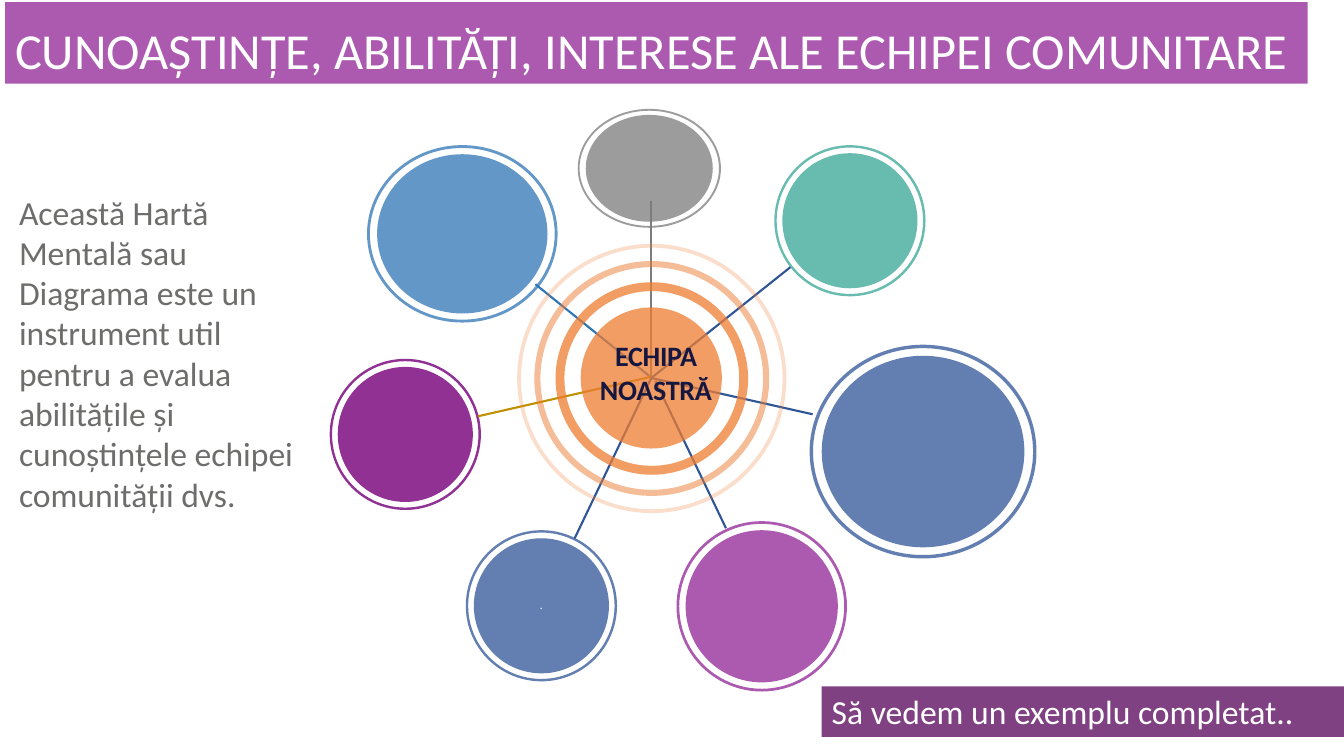
from dataclasses import dataclass

from lxml.etree import SubElement
from pptx import Presentation
from pptx.dml.color import RGBColor
from pptx.enum.shapes import MSO_CONNECTOR as Connector, MSO_SHAPE as Shape
from pptx.enum.text import MSO_ANCHOR as Anchor, MSO_AUTO_SIZE as AutoSize, PP_ALIGN as Align
from pptx.oxml.ns import qn
from pptx.util import Emu, Pt

PX = 9144  # 100 px to the inch

WHITE = RGBColor(0xFF, 0xFF, 0xFF)
GREY = RGBColor(0x7C, 0x7C, 0x7C)
TEAL = RGBColor(0x68, 0xBB, 0xAF)
NAVY = RGBColor(0x2F, 0x55, 0x97)
BLUE = RGBColor(0x2E, 0x75, 0xB6)
ORCHID = RGBColor(0xAB, 0x5A, 0xB0)
PURPLE = RGBColor(0x90, 0x31, 0x93)
PLUM = RGBColor(0x7F, 0x41, 0x82)
GOLD = RGBColor(0xBF, 0x90, 0x00)
ORANGE = RGBColor(0xED, 0x7D, 0x31)
INK = RGBColor(0x16, 0x17, 0x41)
TEXT_GREY = RGBColor(0x6D, 0x6E, 0x6C)

HUB_CENTRE = (646, 375)
HUB_DISC = 140
BUBBLE_RING = 0.016
BUBBLE_INSET = 0.053


@dataclass(frozen=True)
class Box:
    left: int
    top: int
    width: int
    height: int

    def emu(self) -> tuple:
        return tuple(Emu(n * PX) for n in (self.left, self.top, self.width, self.height))

    def inset(self, share: float) -> "Box":
        dx, dy = round(self.width * share), round(self.height * share)
        return Box(self.left + dx, self.top + dy, self.width - 2 * dx, self.height - 2 * dy)


@dataclass(frozen=True)
class Bubble:
    ring: Box
    color: RGBColor
    opacity: int = 100
    label: str = ""


@dataclass(frozen=True)
class Spoke:
    start: tuple[int, int]
    end: tuple[int, int]
    color: RGBColor


@dataclass(frozen=True)
class HubRing:
    size: int
    thickness: float
    opacity: int


BUBBLES = [
    Bubble(Box(573, 108, 142, 118), GREY, 75),
    Bubble(Box(768, 144, 150, 150), TEAL),
    Bubble(Box(803, 342, 225, 212), NAVY, 75),
    Bubble(Box(671, 517, 169, 169), ORCHID),
    Bubble(Box(462, 526, 150, 150), NAVY, 75, "."),
    Bubble(Box(327, 356, 150, 150), PURPLE),
    Bubble(Box(364, 144, 189, 176), BLUE, 75),
]
SPOKES = [
    Spoke((646, 199), (646, 377), GREY),
    Spoke((784, 265), (646, 375), NAVY),
    Spoke((531, 282), (644, 373), BLUE),
    Spoke((474, 413), (645, 374), GOLD),
    Spoke((806, 411), (646, 375), NAVY),
    Spoke((720, 524), (650, 378), NAVY),
    Spoke((570, 534), (646, 375), NAVY),
]
HUB_RINGS = [HubRing(191, 0.046, 75), HubRing(233, 0.026, 50), HubRing(267, 0.014, 25)]


def add_filled(page, kind: Shape, box: Box, color: RGBColor, opacity: int = 100):
    """Add a preset shape with a plain fill, no outline and no shadow."""
    shape = page.shapes.add_shape(kind, *box.emu())
    shape.shadow.inherit = False
    shape.line.fill.background()
    shape.fill.solid()
    shape.fill.fore_color.rgb = color
    if opacity < 100:
        tint = next(shape._element.spPr.iter(qn("a:srgbClr")))
        SubElement(tint, qn("a:alpha"), val=str(opacity * 1000))
    return shape


def add_donut(page, box: Box, thickness: float, color: RGBColor, opacity: int) -> None:
    donut = add_filled(page, Shape.DONUT, box, color, opacity)
    donut.adjustments[0] = thickness


def write(shape, text: str, size: int, color: RGBColor, *, bold: bool = False,
          align: Align = Align.LEFT, anchor: Anchor = Anchor.TOP,
          line_spacing: float = 1.0, tracking: int = 0, margin: int | None = None) -> None:
    """Set one paragraph; tracking is in hundredths of a point."""
    frame = shape.text_frame
    frame_format = {"word_wrap": True, "auto_size": AutoSize.NONE, "vertical_anchor": anchor}
    if margin is not None:
        for side in ("left", "top", "right", "bottom"):
            frame_format[f"margin_{side}"] = margin
    para = frame.paragraphs[0]
    span = para.add_run()
    span.text = text
    formats = [
        (frame, frame_format),
        (para, {"alignment": align, "line_spacing": line_spacing}),
        (span.font, {"name": "Calibri", "size": Pt(size), "bold": bold}),
    ]
    for target, values in formats:
        for name, value in values.items():
            setattr(target, name, value)
    span.font.color.rgb = color
    if tracking:
        span.font._element.set("spc", str(tracking))


def add_bubble(page, bubble: Bubble) -> None:
    disc = add_filled(page, Shape.OVAL, bubble.ring.inset(BUBBLE_INSET),
                      bubble.color, bubble.opacity)
    if bubble.label:
        write(disc, bubble.label, 8, WHITE, align=Align.CENTER, anchor=Anchor.MIDDLE,
              line_spacing=0.95, tracking=-20, margin=0)
    add_donut(page, bubble.ring, BUBBLE_RING, bubble.color, bubble.opacity)


def add_spoke(page, spoke: Spoke) -> None:
    ends = (Emu(n * PX) for n in spoke.start + spoke.end)
    line = page.shapes.add_connector(Connector.STRAIGHT, *ends)
    line.line.color.rgb = spoke.color
    line.line.width = Pt(1.5)
    SubElement(line._element.spPr, qn("a:effectLst"))


def hub_box(size: int) -> Box:
    x, y = HUB_CENTRE
    return Box(x - size // 2, y - size // 2, size, size)


def add_hub(page) -> None:
    add_filled(page, Shape.OVAL, hub_box(HUB_DISC), ORANGE, 75)
    for ring in HUB_RINGS:
        add_donut(page, hub_box(ring.size), ring.thickness, ORANGE, ring.opacity)
    label = page.shapes.add_textbox(*Box(571, 331, 159, 77).emu())
    write(label, "ECHIPA NOASTRĂ", 20, INK, bold=True, align=Align.CENTER,
          anchor=Anchor.MIDDLE, tracking=-20)


def add_title(page) -> None:
    title = page.shapes.title
    title.left, title.top, title.width, title.height = Box(5, 2, 1292, 81).emu()
    title.fill.solid()
    title.fill.fore_color.rgb = ORCHID
    write(title, "CUNOAȘTINȚE, ABILITĂȚI, INTERESE ALE ECHIPEI COMUNITARE", 36, WHITE,
          line_spacing=1.2)


def main() -> None:
    deck = Presentation()
    deck.slide_width, deck.slide_height = Emu(1333 * PX), Emu(750 * PX)
    page = deck.slides.add_slide(deck.slide_layouts.get_by_name("Title Only"))
    add_title(page)
    for bubble in BUBBLES:
        add_bubble(page, bubble)
    for spoke in SPOKES:
        add_spoke(page, spoke)
    add_hub(page)
    intro = page.shapes.add_textbox(*Box(9, 185, 301, 333).emu())
    write(intro, "Această Hartă Mentală sau Diagrama este un instrument util pentru a evalua "
          "abilitățile și cunoștințele echipei comunității dvs.", 24, TEXT_GREY)
    banner = add_filled(page, Shape.RECTANGLE, Box(815, 681, 518, 50), PLUM)
    write(banner, "Să vedem un exemplu completat..", 24, WHITE)
    deck.save("out.pptx")


if __name__ == "__main__":
    main()
